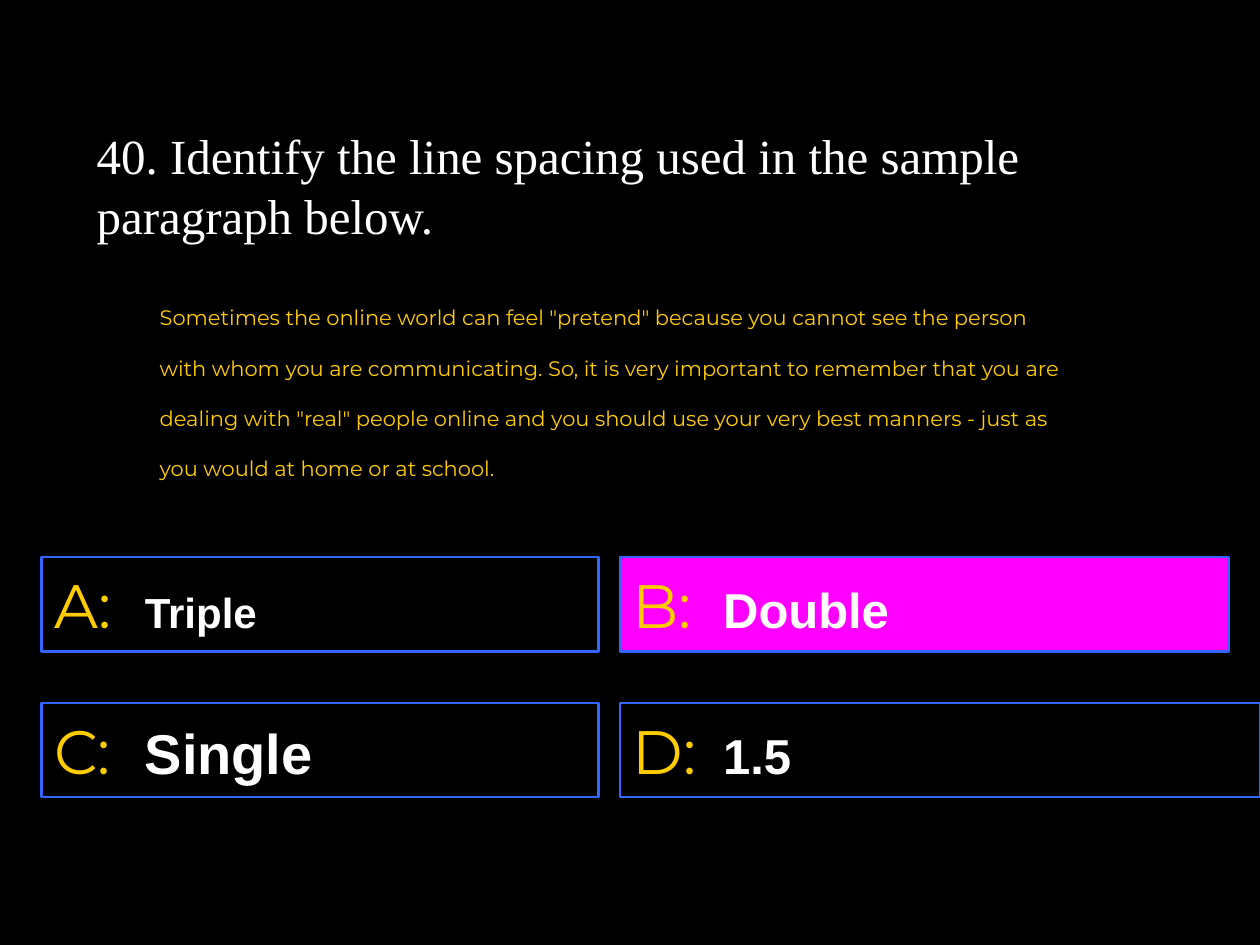
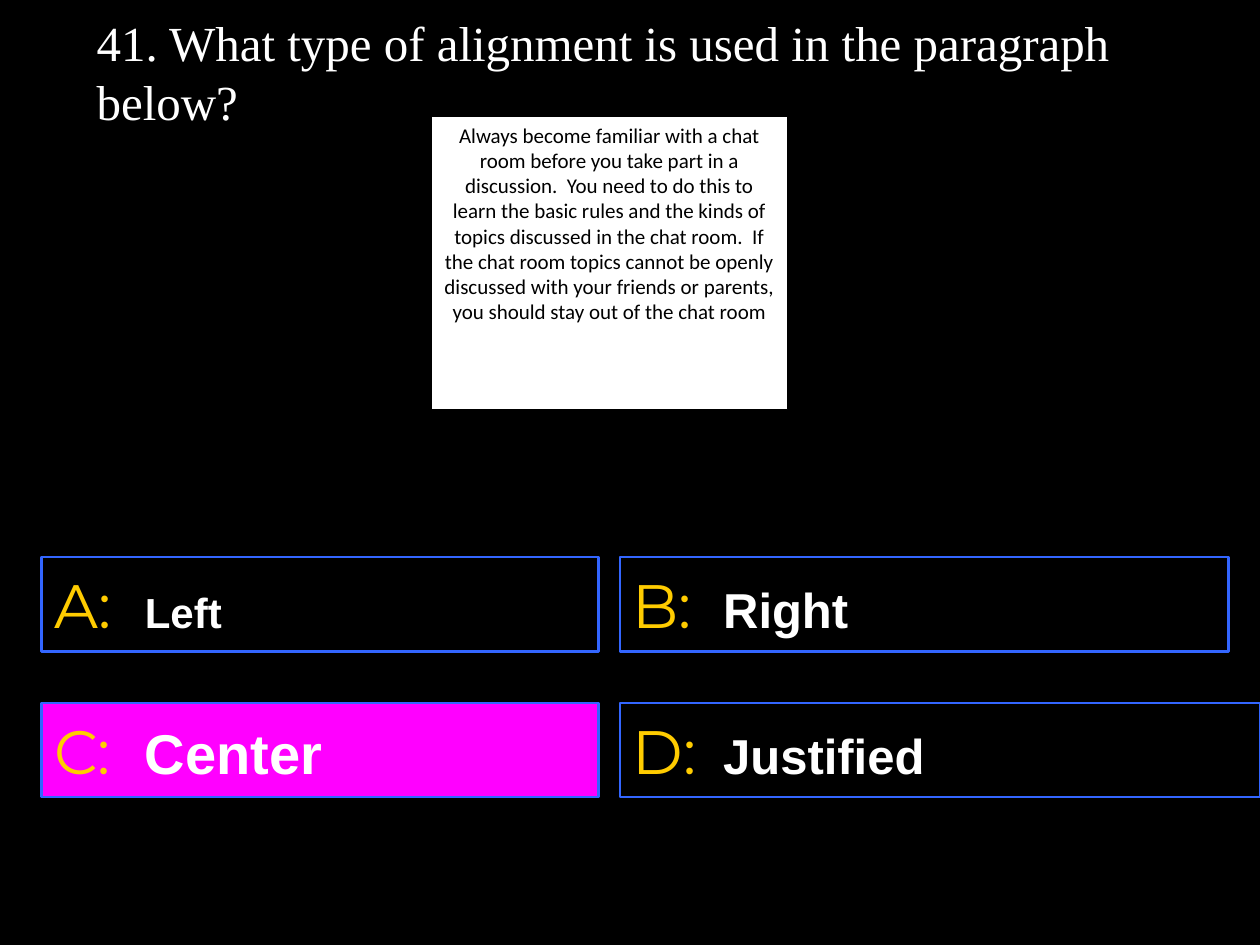
import lxml.etree
import pptx
import pptx.dml.color
import pptx.enum.shapes
import pptx.enum.text
import pptx.oxml.ns
import pptx.util

Cm, Pt = pptx.util.Cm, pptx.util.Pt
ALIGN, ANCHOR = pptx.enum.text.PP_ALIGN, pptx.enum.text.MSO_ANCHOR

BLACK, WHITE, GOLD = "000000", "FFFFFF", "FFCC00"
BLUE, MAGENTA = "3366FF", "FF00FF"

QUESTION = {"name": "Times New Roman", "size": Pt(28), "color": WHITE}
LETTER = {"name": "Montserrat", "size": Pt(35), "color": GOLD}
ANSWER = {"name": "Arial", "bold": True, "color": WHITE}

# letter: left, top, width (cm) and answer size (pt)
ANSWER_BOXES = {
    "A": (0.84, 11.23, 11.23, 24),
    "B": (12.5, 11.23, 12.27, 28),
    "C": (0.84, 14.17, 11.23, 32),
    "D": (12.5, 14.17, 12.9, 28),
}
ANSWER_HEIGHT = 1.9
ANSWER_TAB = Cm(1.83)

SLIDES = [
    {
        "question": "40. Identify the line spacing used in the sample paragraph below.",
        "question_top": 2.41,
        "sample": 'Sometimes the online world can feel "pretend" because you cannot see '
                  "the person with whom you are communicating. So, it is very important to "
                  'remember that you are dealing with "real" people online and you should '
                  "use your very best manners - just as you would at home or at school.",
        "sample_place": (2.97, 5.51, 19.05, 4.37),
        "sample_fill": None,
        "sample_font": {"name": "Montserrat", "size": Pt(12), "color": GOLD},
        "sample_format": {"alignment": ALIGN.LEFT, "line_spacing": 2.0},
        "answers": ["Triple", "Double", "Single", "1.5"],
        "correct": "B",
    },
    {
        "question": "41. What type of alignment is used in the paragraph below?",
        "question_top": 0.13,
        "sample": "Always become familiar with a chat room before you take part in a "
                  "discussion.  You need to do this to learn the basic rules and the kinds "
                  "of topics discussed in the chat room.  If the chat room topics cannot be "
                  "openly discussed with your friends or parents, you should stay out of "
                  "the chat room",
        "sample_place": (8.69, 2.34, 7.19, 5.92),
        "sample_fill": WHITE,
        "sample_font": {"name": "Calibri", "size": Pt(12), "color": BLACK},
        "sample_format": {"alignment": ALIGN.CENTER, "space_after": Pt(10)},
        "answers": ["Left", "Right", "Center", "Justified"],
        "correct": "C",
    },
]


def add_span(para, text, font):
    span = para.add_run()
    span.text = text
    for key, value in font.items():
        if key == "color":
            span.font.color.rgb = pptx.dml.color.RGBColor.from_string(value)
        else:
            setattr(span.font, key, value)


def add_box(page, place, fill, line, width, anchor, para_format):
    """Add a bordered rectangle and return its formatted first paragraph."""
    box = page.shapes.add_shape(
        pptx.enum.shapes.MSO_SHAPE.RECTANGLE, *[Cm(length) for length in place])
    box.shadow.inherit = False
    if fill:
        box.fill.solid()
        box.fill.fore_color.rgb = pptx.dml.color.RGBColor.from_string(fill)
    else:
        box.fill.background()
    box.line.color.rgb = pptx.dml.color.RGBColor.from_string(line)
    box.line.width = Pt(width)
    box.text_frame.word_wrap = True
    box.text_frame.vertical_anchor = anchor
    para = box.text_frame.paragraphs[0]
    for key, value in para_format.items():
        setattr(para, key, value)
    return para


deck = pptx.Presentation()
deck.slide_width, deck.slide_height = Cm(25.4), Cm(19.05)

for content in SLIDES:
    page = deck.slides.add_slide(deck.slide_layouts[6])
    page.background.fill.solid()
    page.background.fill.fore_color.rgb = pptx.dml.color.RGBColor.from_string(BLACK)

    # Answer choices, with the correct one highlighted
    for (letter, (left, top, width, size)), answer in zip(
            ANSWER_BOXES.items(), content["answers"]):
        fill = MAGENTA if letter == content["correct"] else None
        para = add_box(page, (left, top, width, ANSWER_HEIGHT), fill, BLUE, 1.5,
                       ANCHOR.MIDDLE, {"alignment": ALIGN.LEFT})
        tabs = lxml.etree.SubElement(
            para._p.get_or_add_pPr(), pptx.oxml.ns.qn("a:tabLst"))
        lxml.etree.SubElement(
            tabs, pptx.oxml.ns.qn("a:tab"), pos=str(int(ANSWER_TAB)), algn="l")
        add_span(para, f"{letter}:\t", LETTER)
        add_span(para, answer, {**ANSWER, "size": Pt(size)})

    # Question
    box = page.shapes.add_textbox(
        Cm(1.7), Cm(content["question_top"]), Cm(21.59), Cm(2.65))
    box.text_frame.word_wrap = True
    para = box.text_frame.paragraphs[0]
    para.line_spacing = Pt(33.75)
    add_span(para, content["question"], QUESTION)

    # Sample paragraph
    para = add_box(page, content["sample_place"], content["sample_fill"], BLACK, 0.75,
                   ANCHOR.TOP, content["sample_format"])
    add_span(para, content["sample"], content["sample_font"])

deck.save("out.pptx")
